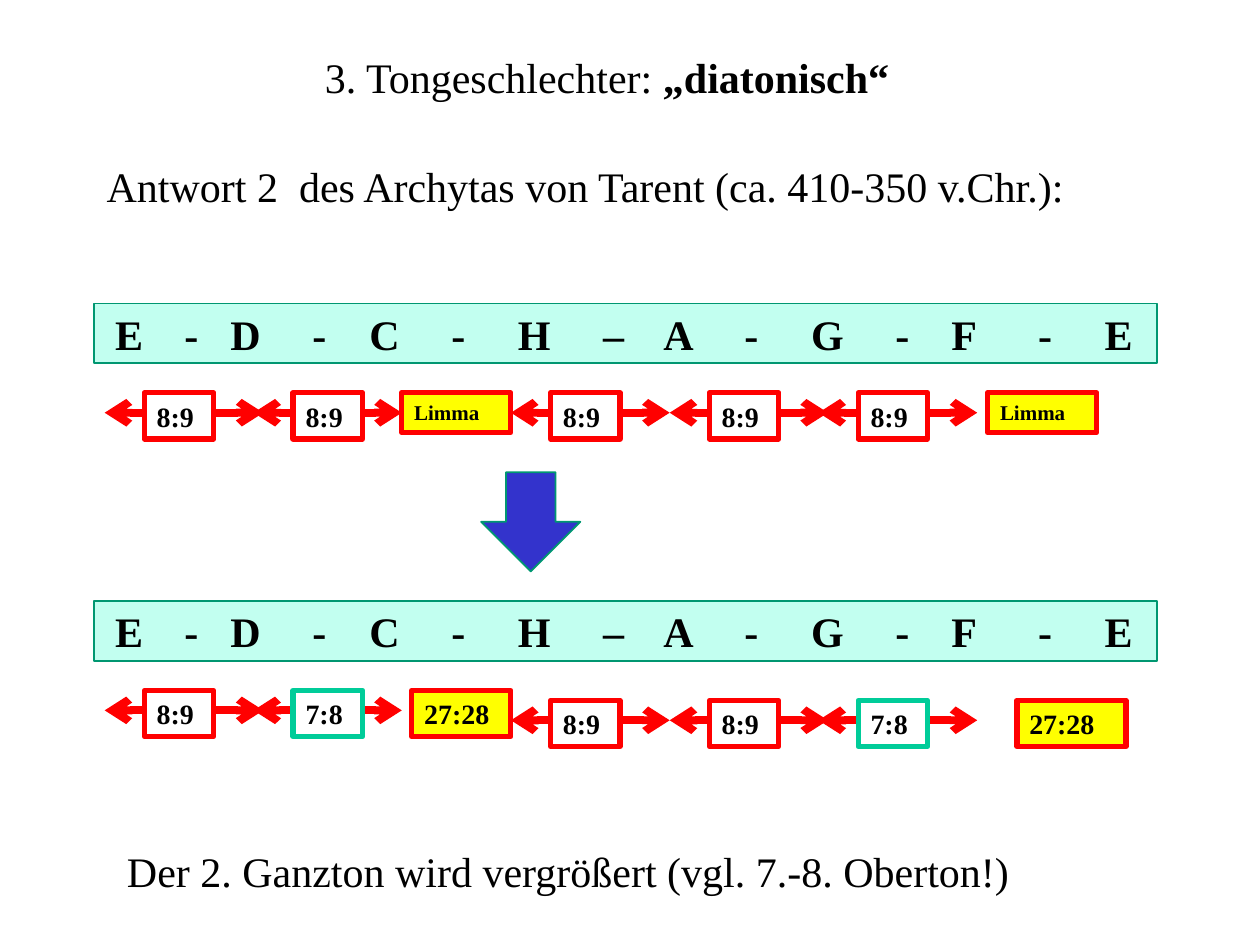
from lxml import etree
from pptx import Presentation
from pptx.dml.color import RGBColor
from pptx.enum.shapes import MSO_CONNECTOR, MSO_SHAPE
from pptx.enum.text import MSO_ANCHOR, MSO_AUTO_SIZE, PP_ALIGN
from pptx.oxml.ns import qn
from pptx.util import Cm, Pt

RECT, DOWN_ARROW = MSO_SHAPE.RECTANGLE, MSO_SHAPE.DOWN_ARROW
STRAIGHT = MSO_CONNECTOR.STRAIGHT
TOP, MIDDLE = MSO_ANCHOR.TOP, MSO_ANCHOR.MIDDLE
LEFT = PP_ALIGN.LEFT
GROW, FIXED = MSO_AUTO_SIZE.SHAPE_TO_FIT_TEXT, MSO_AUTO_SIZE.NONE
SIDE_LEFT, SIDE_RIGHT = 1, 3

WHITE, YELLOW, RED, TEAL = "FFFFFF", "FFFF00", "FF0000", "00CC99"
MINT, GREEN, BLUE = "C2FFF0", "009771", "3333CC"

SCALE = "E - D - C - H – A - G - F - E".split()
# Centre of every sign after the first, from the left edge of the text
SCALE_TABS = [1.54, 2.63, 4.12, 5.43, 6.92, 8.45, 10.05, 11.36,
              12.83, 14.36, 15.87, 17.12, 18.75, 20.23]
# Start and end of the five whole-tone arrows
TONES = [(2.11, 5.31), (5.11, 8.1), (10.3, 13.5), (13.5, 16.69), (16.5, 19.7)]
ROW_TOP = 7.92
LOW_LEFT, LOW_RIGHT = 13.92, 14.12


def rgb(value):
    return RGBColor.from_string(value)


def add_text(p, text, size=24, bold=False, color="000000", font="Times New Roman"):
    r = p.add_run()
    r.text = text
    r.font.size = Pt(size)
    r.font.bold = bold
    r.font.name = font
    r.font.color.rgb = rgb(color)


class SlideBuilder:
    def __init__(self, s):
        self.s = s

    def text(self, x, y, w, h, *runs, wrap=False):
        """Each run is a pair of wording and bold flag."""
        tf = self.s.shapes.add_textbox(Cm(x), Cm(y), Cm(w), Cm(h)).text_frame
        tf.word_wrap = wrap
        tf.auto_size = GROW
        for wording, bold in runs:
            add_text(tf.paragraphs[0], wording, bold=bold)

    def shape(self, kind, x, y, w, h, fill, line, width):
        sp = self.s.shapes.add_shape(kind, Cm(x), Cm(y), Cm(w), Cm(h))
        sp.shadow.inherit = False
        sp.fill.solid()
        sp.fill.fore_color.rgb = rgb(fill)
        sp.line.color.rgb = rgb(line)
        sp.line.width = Pt(width)
        return sp

    def box(self, x, y, w, h, label, fill=WHITE, line=RED, size=16):
        sp = self.shape(RECT, x, y, w, h, fill, line, 3)
        tf = sp.text_frame
        tf.vertical_anchor = TOP
        tf.auto_size = GROW
        tf.paragraphs[0].alignment = LEFT
        add_text(tf.paragraphs[0], label, size, bold=True)
        return sp

    def arrow(self, x1, x2, y):
        cn = self.s.shapes.add_connector(STRAIGHT, Cm(x1), Cm(y), Cm(x2), Cm(y))
        cn.line.color.rgb = rgb(RED)
        cn.line.width = Pt(4.5)
        ln = cn.line._get_or_add_ln()
        for end in ("a:headEnd", "a:tailEnd"):
            etree.SubElement(ln, qn(end), type="arrow")
        etree.SubElement(cn._element.spPr, qn("a:effectLst"))
        return cn

    def tone(self, span, top, label, line=RED):
        """Double arrow with its ratio on top."""
        start, end = span
        cn = self.arrow(start, end, top + 0.4)
        self.box(start + 0.8, top, 1.4, 0.93, label, line=line)
        return cn

    def scale(self, top):
        """Bar of note names, set on centred tab stops."""
        sp = self.shape(RECT, 1.9, top, 21.42, 1.2, MINT, GREEN, 1)
        tf = sp.text_frame
        tf.auto_size = FIXED
        tf.vertical_anchor = MIDDLE
        tf.margin_left, tf.margin_right = Cm(0.42), Cm(0)
        p = tf.paragraphs[0]
        p.alignment = LEFT
        tabs = etree.SubElement(p._p.get_or_add_pPr(), qn("a:tabLst"))
        for pos in SCALE_TABS:
            etree.SubElement(tabs, qn("a:tab"), pos=str(Cm(pos)), algn="ctr")
        add_text(p, "\t".join(SCALE), bold=True)


def main():
    prs = Presentation()
    prs.slide_width, prs.slide_height = Cm(25.4), Cm(19.05)
    b = SlideBuilder(prs.slides.add_slide(prs.slide_layouts[6]))

    b.text(6.3, 0.91, 12, 1.27, ("3. Tongeschlechter: ", False), ("„diatonisch“", True))
    b.text(1.9, 3.12, 22, 4.37,
           ("Antwort 2  des Archytas von Tarent (ca. 410-350 v.Chr.):", False), wrap=True)

    b.scale(6.12)
    arrows = [b.tone(span, ROW_TOP, "8:9") for span in TONES]
    limma, _ = [b.box(x, ROW_TOP, 2.2, 0.8, "Limma", YELLOW, size=12)
                for x in (8.1, 19.91)]
    arrows[1].end_connect(limma, SIDE_LEFT)
    arrows[2].begin_connect(limma, SIDE_RIGHT)

    b.shape(DOWN_ARROW, 9.7, 9.52, 2, 2, BLUE, GREEN, 1)

    b.scale(12.12)
    tops = [LOW_LEFT] * 2 + [LOW_RIGHT] * 3
    ratios = ["8:9", "7:8", "8:9", "8:9", "7:8"]
    for span, top, ratio in zip(TONES, tops, ratios):
        b.tone(span, top, ratio, TEAL if ratio == "7:8" else RED)
    b.box(8.3, LOW_LEFT, 2, 0.93, "27:28", YELLOW)
    b.box(20.5, LOW_RIGHT, 2.2, 0.93, "27:28", YELLOW)

    b.text(2.31, 16.92, 18.67, 1.27,
           ("Der 2. Ganzton wird vergrößert (vgl. 7.-8. Oberton!)", False))
    prs.save("out.pptx")


if __name__ == "__main__":
    main()
